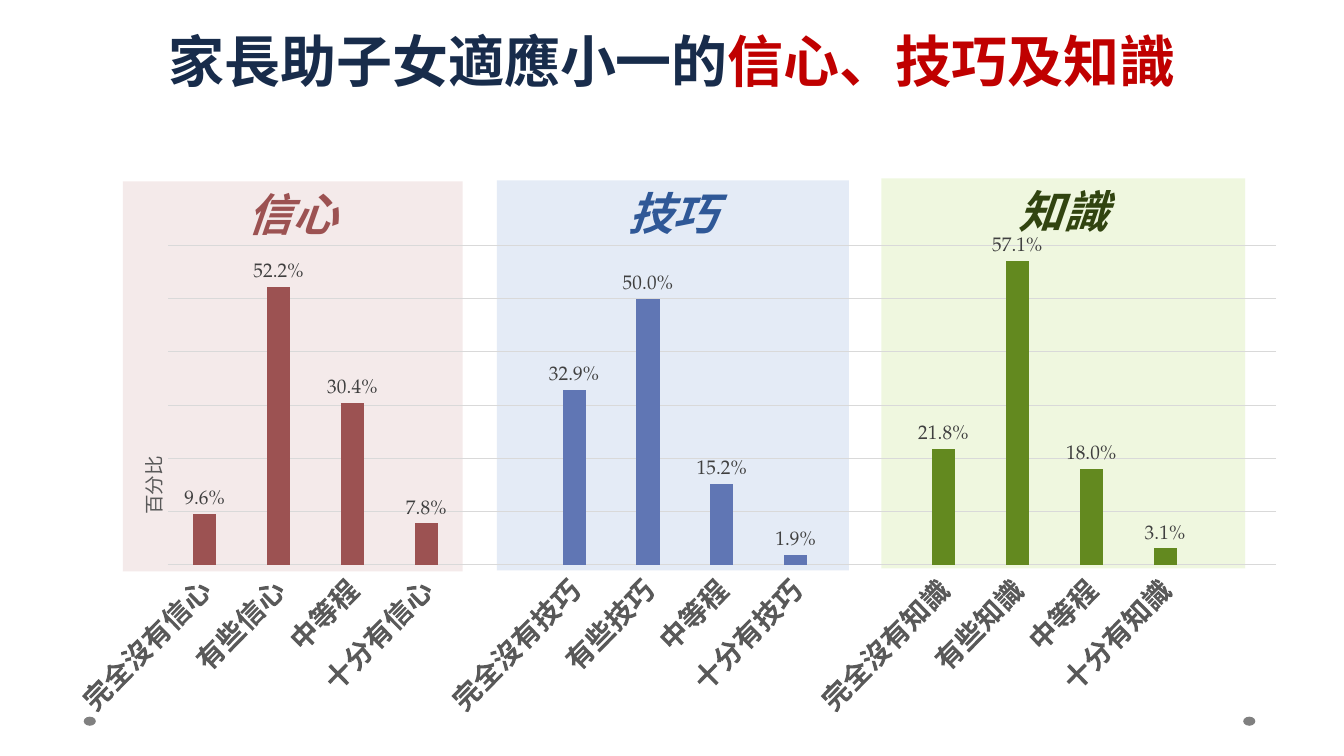
from lxml import etree
from pptx import Presentation
from pptx import util as u
from pptx.chart import data as chart_data
from pptx.dml.color import RGBColor
from pptx.enum import chart as ch, shapes, text
from pptx.oxml import parse_xml
from pptx.oxml.ns import nsdecls, qn

WHITE = RGBColor(0xFF, 0xFF, 0xFF)
NAVY = RGBColor(0x18, 0x2C, 0x4B)
RED = RGBColor(0xC0, 0x00, 0x00)
DOT_GREY = RGBColor(0x80, 0x80, 0x80)
AXIS_GREY = RGBColor(0x59, 0x59, 0x59)
LABEL_GREY = RGBColor(0x40, 0x40, 0x40)
GRID_GREY = RGBColor(0xD9, 0xD9, 0xD9)
BLACK = RGBColor(0x00, 0x00, 0x00)
BLUE_BAR = RGBColor(0x60, 0x76, 0xB4)

HEADING_FONT, BODY_FONT = "Arial", "TeX Gyre Pagella"

TOPICS = [
    {"name": "信心", "panel": (9.15, 24, 25.28, 51.6), "tint": RGBColor(0xEC, 0xDB, 0xDB),
     "ink": RGBColor(0x9C, 0x52, 0x52), "bar": RGBColor(0x9C, 0x52, 0x52),
     "shares": (0.096, 0.522, 0.304, 0.078)},
    {"name": "技巧", "panel": (36.98, 23.87, 26.18, 51.6), "tint": RGBColor(0xCF, 0xDC, 0xF0),
     "ink": RGBColor(0x2F, 0x58, 0x97), "bar": BLUE_BAR,
     "shares": (0.329, 0.5, 0.152, 0.019)},
    {"name": "知識", "panel": (65.57, 23.6, 27.08, 51.6), "tint": RGBColor(0xE3, 0xF2, 0xC7),
     "ink": RGBColor(0x31, 0x44, 0x10), "bar": RGBColor(0x63, 0x89, 0x1F),
     "shares": (0.218, 0.571, 0.18, 0.031)},
]
LEVELS = ("完全沒有{}", "有些{}", "中等程度的{}", "十分有{}")


def part_of(box, left, top, width, height):
    """Return the part of a box given in percent of its size."""
    x, y, w, h = box
    return (int(x + w * left / 100), int(y + h * top / 100),
            int(w * width / 100), int(h * height / 100))


def set_font(font, **values):
    """Apply format values to a font."""
    color = values.pop("color")
    for key, value in values.items():
        setattr(font, key, value)
    font.color.rgb = color


def add_block(slide, kind, box, color, opacity=100):
    """Add a borderless filled shape."""
    block = slide.shapes.add_shape(kind, *box)
    block.shadow.inherit = False
    block.line.fill.background()
    block.fill.solid()
    block.fill.fore_color.rgb = color
    if opacity < 100:
        tone = block.fill._xPr.find(qn("a:solidFill"))[0]
        etree.SubElement(tone, qn("a:alpha"), val=str(opacity * 1000))
    return block


def add_runs(block, anchor, runs):
    """Write one centred line of formatted runs and return its paragraph."""
    frame = block.text_frame
    frame.word_wrap = True
    frame.vertical_anchor = anchor
    line = frame.paragraphs[0]
    line.alignment = text.PP_ALIGN.CENTER
    for words, values in runs:
        run = line.add_run()
        run.text = words
        set_font(run.font, **values)
    return line


def add_corner_dots(slide, box):
    """Place the two footer dots."""
    for left in (92.5, 6.23):
        add_block(slide, shapes.MSO_SHAPE.OVAL, part_of(box, left, 94.8, 0.9, 1.2), DOT_GREY)


def add_topic_panel(slide, box, topic):
    """Place a tinted panel headed by its topic."""
    panel = add_block(slide, shapes.MSO_SHAPE.RECTANGLE, box, topic["tint"], 56)
    heading = dict(size=u.Pt(32), name=HEADING_FONT, bold=True, italic=True, color=topic["ink"])
    add_runs(panel, text.MSO_ANCHOR.TOP, [(topic["name"], heading)])


def set_layout(parent, left, top, width=None, height=None):
    """Fix a chart part at shares of the chart's size."""
    values = [("xMode", "edge"), ("yMode", "edge"), ("x", left), ("y", top)]
    if width:
        values = [("layoutTarget", "inner")] + values + [("w", width), ("h", height)]
    for old in parent.findall(qn("c:layout")):
        parent.remove(old)
    layout = parse_xml(f"<c:layout {nsdecls('c')}><c:manualLayout/></c:layout>")
    for key, value in values:
        etree.SubElement(layout[0], qn(f"c:{key}"), val=str(value))
    return layout


def add_share_chart(slide, box):
    """Place the column chart of all topics."""
    answers = chart_data.CategoryChartData(number_format="0.0%")
    answers.categories = [label for topic in TOPICS
                          for label in [level.format(topic["name"]) for level in LEVELS] + [""]]
    answers.add_series("Series 1", [share for topic in TOPICS
                                    for share in (*topic["shares"], None)])
    chart = slide.shapes.add_chart(ch.XL_CHART_TYPE.COLUMN_CLUSTERED, *box, answers).chart
    chart.has_legend = chart.has_title = False
    set_font(chart.font, size=u.Pt(10), name=BODY_FONT, color=BLACK)
    plot_area = chart.plots[0]._element.getparent()
    plot_area.insert(0, set_layout(plot_area, 0.056, 0.03, 0.885, 0.621))

    columns = chart.plots[0]
    for key, value in dict(gap_width=219, overlap=-27, vary_by_categories=False,
                           has_data_labels=True).items():
        setattr(columns, key, value)
    for key, value in dict(show_value=True, number_format="0.0%", number_format_is_linked=False,
                           position=ch.XL_LABEL_POSITION.OUTSIDE_END).items():
        setattr(columns.data_labels, key, value)
    set_font(columns.data_labels.font, size=u.Pt(14), color=LABEL_GREY)

    bars = columns.series[0]
    bars.format.fill.solid()
    bars.format.fill.fore_color.rgb = BLUE_BAR
    for group, topic in enumerate(TOPICS):
        for level in range(len(LEVELS)):
            fill = bars.points[group * (len(LEVELS) + 1) + level].format.fill
            fill.solid()
            fill.fore_color.rgb = topic["bar"]

    answer_axis, share_axis = chart.category_axis, chart.value_axis
    answer_axis.major_tick_mark = ch.XL_TICK_MARK.NONE
    set_font(answer_axis.tick_labels.font, size=u.Pt(20), bold=True, color=AXIS_GREY)
    answer_axis._element.find(qn("c:txPr")).find(qn("a:bodyPr")).set("rot", "-2700000")
    for key, value in dict(minimum_scale=0, maximum_scale=0.6, major_unit=0.1,
                           has_major_gridlines=True, visible=False).items():
        setattr(share_axis, key, value)
    for line in (answer_axis.format.line, share_axis.major_gridlines.format.line):
        line.width = u.Pt(0.75)
        line.color.rgb = GRID_GREY

    caption = share_axis.axis_title
    caption.text_frame.text = "百分比"
    set_font(caption.text_frame.paragraphs[0].runs[0].font,
             size=u.Pt(14), bold=False, color=AXIS_GREY)
    caption_xml = caption._element
    caption_xml.find(qn("c:tx")).find(qn("c:rich")).find(qn("a:bodyPr")).set("rot", "-5400000")
    caption_xml.find(qn("c:tx")).addnext(set_layout(caption_xml, 0.028, 0.43))


def add_title(slide, box):
    """Place the two-coloured title band."""
    band = add_block(slide, shapes.MSO_SHAPE.RECTANGLE, box, WHITE, 70)
    base = dict(size=u.Pt(40), bold=True)
    line = add_runs(band, text.MSO_ANCHOR.BOTTOM, [
        ("家長助子女適應小一的", dict(base, name=BODY_FONT, color=NAVY)),
        ("信心、技巧及知識", dict(base, name=HEADING_FONT, color=RED))])
    line.line_spacing = u.Pt(45)


def main():
    """Build the slide and save it."""
    deck = Presentation()
    deck.slide_width, deck.slide_height = u.Inches(13.33), u.Inches(7.5)
    slide = deck.slides.add_slide(deck.slide_layouts[6])
    page = (0, 0, deck.slide_width, deck.slide_height)
    add_corner_dots(slide, page)
    for topic in reversed(TOPICS):
        add_topic_panel(slide, part_of(page, *topic["panel"]), topic)
    add_share_chart(slide, part_of(page, 5.4, 30.4, 95.05, 68.13))
    add_title(slide, part_of(page, 0, 1.47, 100, 11.6))
    deck.save("out.pptx")


if __name__ == "__main__":
    main()
